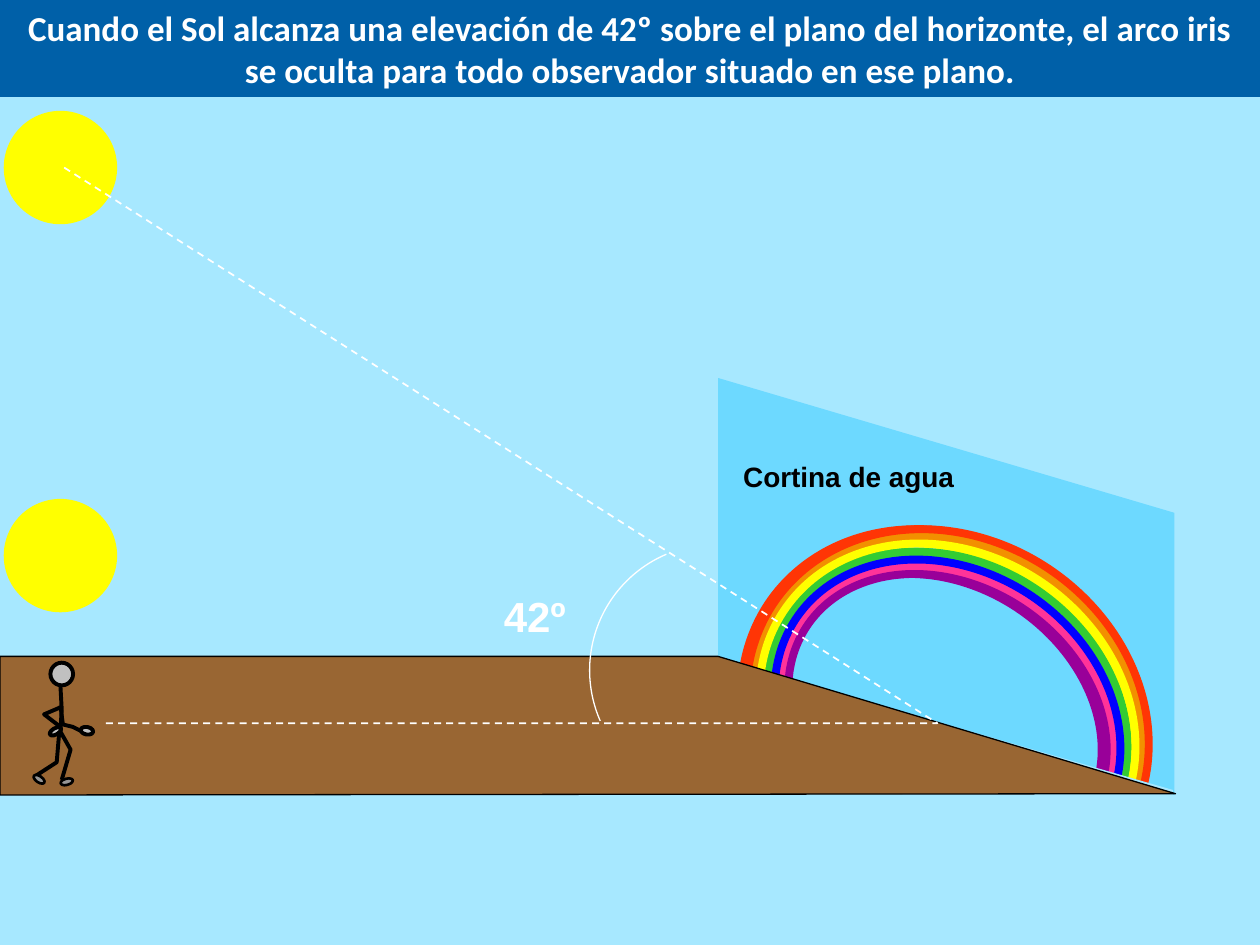
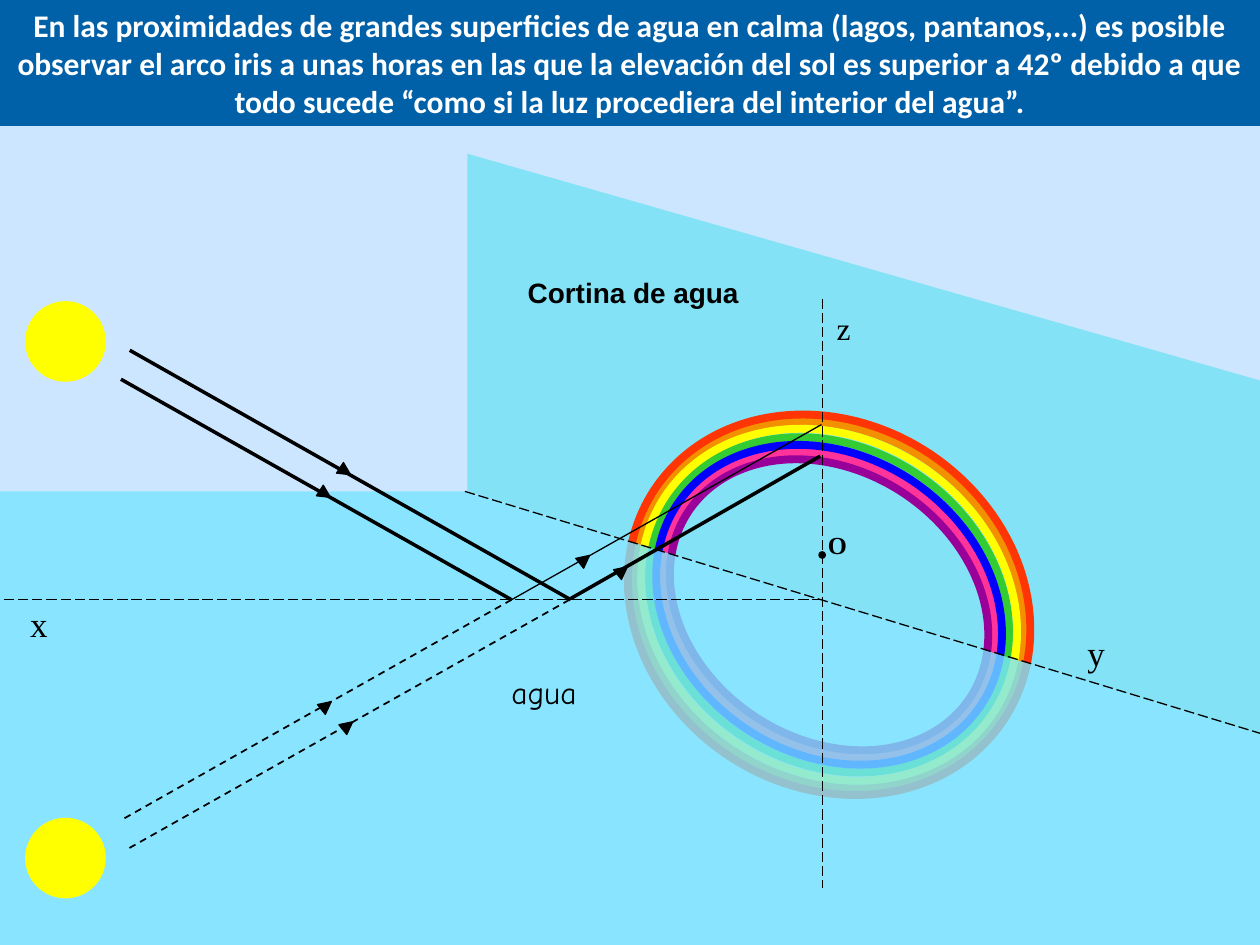
from dataclasses import dataclass

from lxml import etree
from pptx import Presentation
from pptx import util as u
from pptx.dml.color import RGBColor
from pptx.enum import dml, shapes, text
from pptx.oxml import ns


@dataclass(frozen=True)
class Theme:
    band: str = "0060A8"
    white: str = "FFFFFF"
    black: str = "000000"
    sun: str = "FFFF00"
    earth: str = "996633"
    skin: str = "C0C0C0"
    shoe: str = "969696"
    title_font: str = "Calibri"
    label_font: str = "Arial"
    axis_font: str = "Times New Roman"
    water_font: str = "Comic Neue"
    angle_size: int = 24
    axis_size: int = 20
    small_axis_size: int = 18
    curtain_size: int = 16
    origin_size: int = 14


theme = Theme()
DASH = dml.MSO_LINE.DASH
LONG_DASH = dml.MSO_LINE.LONG_DASH
OVAL = shapes.MSO_SHAPE.OVAL


def paint(shape, fill=None, line=None, width=0.75, dash=None):
    if shape.shape_type == shapes.MSO_SHAPE_TYPE.LINE:
        etree.SubElement(shape._element.spPr, ns.qn("a:effectLst"))
    else:
        shape.shadow.inherit = False
        if fill:
            shape.fill.solid()
            shape.fill.fore_color.rgb = RGBColor.from_string(fill)
        else:
            shape.fill.background()
    if line:
        shape.line.color.rgb = RGBColor.from_string(line)
        shape.line.width = u.Pt(width)
        if dash:
            shape.line.dash_style = dash
    else:
        shape.line.fill.background()
    return shape


def outline(slide, points, closed=True):
    start, *rest = [(u.Inches(x), u.Inches(y)) for x, y in points]
    builder = slide.shapes.build_freeform(*start)
    builder.add_line_segments(rest, close=closed)
    return builder.convert_to_shape()


presentation = Presentation()
presentation.slide_width = u.Inches(10)
presentation.slide_height = u.Inches(7.5)

rings = [
    (3.22, 2.77, "F29000"),
    (3, 2.5, "33CC33"),
    (2.79, 2.25, "FF3399"),
    (2.89, 2.37, "0000FF"),
    (3.12, 2.64, "FFFF00"),
    (2.68, 2.13, "990099"),
    (3.32, 2.88, "FF3505"),
]

scenes = [
    dict(
        title="Cuando el Sol alcanza una elevación de 42º sobre el plano del horizonte, "
              "el arco iris se oculta para todo observador situado en ese plano.",
        band_height=0.77, title_size=20, sky="A7E8FF",
        curtain=[(5.7, 3), (9.32, 4.07), (9.32, 6.31), (5.7, 5.21)], curtain_color="6DD9FF",
        centers=[(7.48, 5.71), (7.52, 5.71)],
        cover=[(5.68, 5.22), (9.31, 6.27), (9.31, 7.5), (5.68, 7.5)],
        cover_color="A7E8FF", opacity=100,
        suns=[(0.03, 0.88), (0.03, 3.96)], sun_size=0.9,
    ),
    dict(
        title="En las proximidades de grandes superficies de agua en calma (lagos, pantanos,...) "
              "es posible observar el arco iris a unas horas en las que la elevación del sol es "
              "superior a 42º debido a que todo sucede “como si la luz procediera del interior del agua”.",
        band_height=1, title_size=18, sky="CDE6FF",
        curtain=[(3.71, 1.22), (10, 3.02), (10, 5.83), (3.71, 3.9)], curtain_color="83E2F5",
        centers=[(6.58, 4.8)],
        cover=[(10, 5.83), (3.7, 3.9), (0, 3.9), (0, 7.5), (10, 7.5)],
        cover_color="79E5FF", opacity=80,
        suns=[(0.2, 2.39), (0.2, 6.49)], sun_size=0.64,
    ),
]

for scene in scenes:
    slide = presentation.slides.add_slide(presentation.slide_layouts[5])
    slide.background.fill.solid()
    slide.background.fill.fore_color.rgb = RGBColor.from_string(scene["sky"])

    title = slide.shapes.title
    title.left, title.top = u.Inches(0), u.Inches(0)
    title.width, title.height = u.Inches(10), u.Inches(scene["band_height"])
    paint(title, theme.band)
    frame = title.text_frame
    frame.auto_size = text.MSO_AUTO_SIZE.NONE
    frame.word_wrap = True
    frame.vertical_anchor = text.MSO_ANCHOR.MIDDLE
    paragraph = frame.paragraphs[0]
    paragraph.alignment = text.PP_ALIGN.CENTER
    run = paragraph.add_run()
    run.text = scene["title"]
    run.font.name = theme.title_font
    run.font.size = u.Pt(scene["title_size"])
    run.font.bold = True
    run.font.color.rgb = RGBColor.from_string(theme.white)

    paint(outline(slide, scene["curtain"]), scene["curtain_color"])
    for center_x, center_y in scene["centers"]:
        for width, height, color in rings:
            ring = slide.shapes.add_shape(
                OVAL, u.Inches(center_x - width / 2), u.Inches(center_y - height / 2),
                u.Inches(width), u.Inches(height))
            ring.rotation = 33.3
            paint(ring, line=color, width=4.5)

    cover = paint(outline(slide, scene["cover"]), scene["cover_color"])
    if scene["opacity"] < 100:
        color = cover._element.spPr.find(ns.qn("a:solidFill"))[0]
        etree.SubElement(color, ns.qn("a:alpha"), val=str(scene["opacity"] * 1000))

    size = u.Inches(scene["sun_size"])
    for left, top in scene["suns"]:
        paint(slide.shapes.add_shape(OVAL, u.Inches(left), u.Inches(top), size, size), theme.sun)

horizon, lake = presentation.slides

ground = [(5.7, 5.21), (0, 5.21), (0, 6.31), (9.33, 6.3)]
paint(outline(horizon, ground), theme.earth, theme.black)
sight_lines = [(0.51, 1.33), (7.44, 5.74), (0.83, 5.74)]
paint(outline(horizon, sight_lines, closed=False), line=theme.white, width=1, dash=DASH)

angle_arc = horizon.shapes.add_shape(
    shapes.MSO_SHAPE.ARC, u.Inches(4.68), u.Inches(4.32), u.Inches(2), u.Inches(2))
for index, degrees in enumerate((156.3, 247)):
    angle_arc.adjustments[index] = degrees * 0.6
paint(angle_arc, line=theme.white)

limbs = [
    [(0.48, 5.45), (0.49, 5.63), (0.48, 5.8)],
    [(0.49, 5.61), (0.35, 5.67), (0.48, 5.77)],
    [(0.48, 5.6), (0.5, 5.75), (0.58, 5.77), (0.64, 5.8)],
    [(0.47, 5.81), (0.45, 6.05), (0.28, 6.16)],
    [(0.47, 5.79), (0.56, 5.95), (0.49, 6.19)],
]
for limb in limbs:
    paint(outline(horizon, limb, closed=False), line=theme.black, width=2.25)

head_hands_feet = [
    (0.4, 5.26, 0.18, 0.18, 0, theme.skin, 2.25),
    (0.39, 5.78, 0.1, 0.05, -30, theme.skin, 2.25),
    (0.64, 5.77, 0.1, 0.06, 10, theme.skin, 2.25),
    (0.26, 6.16, 0.1, 0.05, 34, theme.shoe, 1.5),
    (0.48, 6.18, 0.1, 0.05, -15, theme.shoe, 1.5),
]
for left, top, width, height, rotation, fill, weight in head_hands_feet:
    part = horizon.shapes.add_shape(
        OVAL, u.Inches(left), u.Inches(top), u.Inches(width), u.Inches(height))
    part.rotation = rotation
    paint(part, fill, theme.black, weight)

axes_and_rays = [
    (6.53, 2.37, 6.53, 7.05, 0.75, LONG_DASH),
    (3.69, 3.9, 10, 5.82, 0.75, LONG_DASH),
    (6.53, 4.76, 0, 4.76, 0.75, LONG_DASH),
    (4.06, 4.76, 0.96, 6.51, 1, DASH),
    (4.52, 4.76, 1.01, 6.74, 1, DASH),
    (1.03, 2.78, 4.53, 4.76, 0, None),
    (0.96, 3.01, 4.06, 4.76, 0, None),
    (6.52, 3.37, 4.06, 4.76, 0.75, None),
    (6.51, 3.62, 4.53, 4.75, 0, None),
]
for *ends, width, dash in axes_and_rays:
    connector = lake.shapes.add_connector(
        shapes.MSO_CONNECTOR.STRAIGHT, *[u.Inches(end) for end in ends])
    paint(connector, line=theme.black, width=width, dash=dash)

DOWNWARD, UPWARD = 123.1, 51.5
ray_markers = [
    (2.69, 3.69, DOWNWARD), (2.53, 3.87, DOWNWARD),
    (2.71, 5.71, UPWARD), (2.54, 5.55, UPWARD),
    (4.89, 4.48, UPWARD), (4.59, 4.39, UPWARD),
]
for left, top, rotation in ray_markers:
    marker = lake.shapes.add_shape(
        shapes.MSO_SHAPE.ISOSCELES_TRIANGLE, u.Inches(left), u.Inches(top),
        u.Inches(0.1), u.Inches(0.1))
    marker.rotation = rotation
    paint(marker, theme.black, theme.black)

origin = lake.shapes.add_shape(
    OVAL, u.Inches(6.5), u.Inches(4.38), u.Inches(0.05), u.Inches(0.05))
paint(origin, theme.black, theme.black)

curtain_style = (theme.label_font, theme.curtain_size, theme.black, True, True)
axis_style = (theme.axis_font, theme.axis_size, theme.black, False, False)
labels = [
    (horizon, "Cortina de agua", 5.8, 3.6, 2.04, 0.37, curtain_style),
    (horizon, "42º", 3.9, 4.64, 0.87, 0.5,
     (theme.label_font, theme.angle_size, theme.white, True, True)),
    (lake, "Cortina de agua", 4.09, 2.14, 2.04, 0.37, curtain_style),
    (lake, "O", 6.57, 4.21, 0.15, 0.23,
     (theme.axis_font, theme.origin_size, theme.black, True, False)),
    (lake, "x", 0.24, 4.78, 0.14, 0.33, axis_style),
    (lake, "y", 8.63, 5.01, 0.14, 0.33, axis_style),
    (lake, "z", 6.64, 2.45, 0.2, 0.3,
     (theme.axis_font, theme.small_axis_size, theme.black, False, False)),
    (lake, "agua", 3.96, 5.29, 0.94, 0.4,
     (theme.water_font, theme.small_axis_size, theme.black, False, True)),
]
for slide, wording, left, top, width, height, (font, size, color, bold, padded) in labels:
    box = slide.shapes.add_textbox(
        u.Inches(left), u.Inches(top), u.Inches(width), u.Inches(height))
    frame = box.text_frame
    frame.word_wrap = True
    if not padded:
        frame.margin_left = frame.margin_right = frame.margin_top = frame.margin_bottom = 0
    run = frame.paragraphs[0].add_run()
    run.text = wording
    run.font.name = font
    run.font.size = u.Pt(size)
    run.font.bold = bold
    run.font.color.rgb = RGBColor.from_string(color)

presentation.save("out.pptx")
